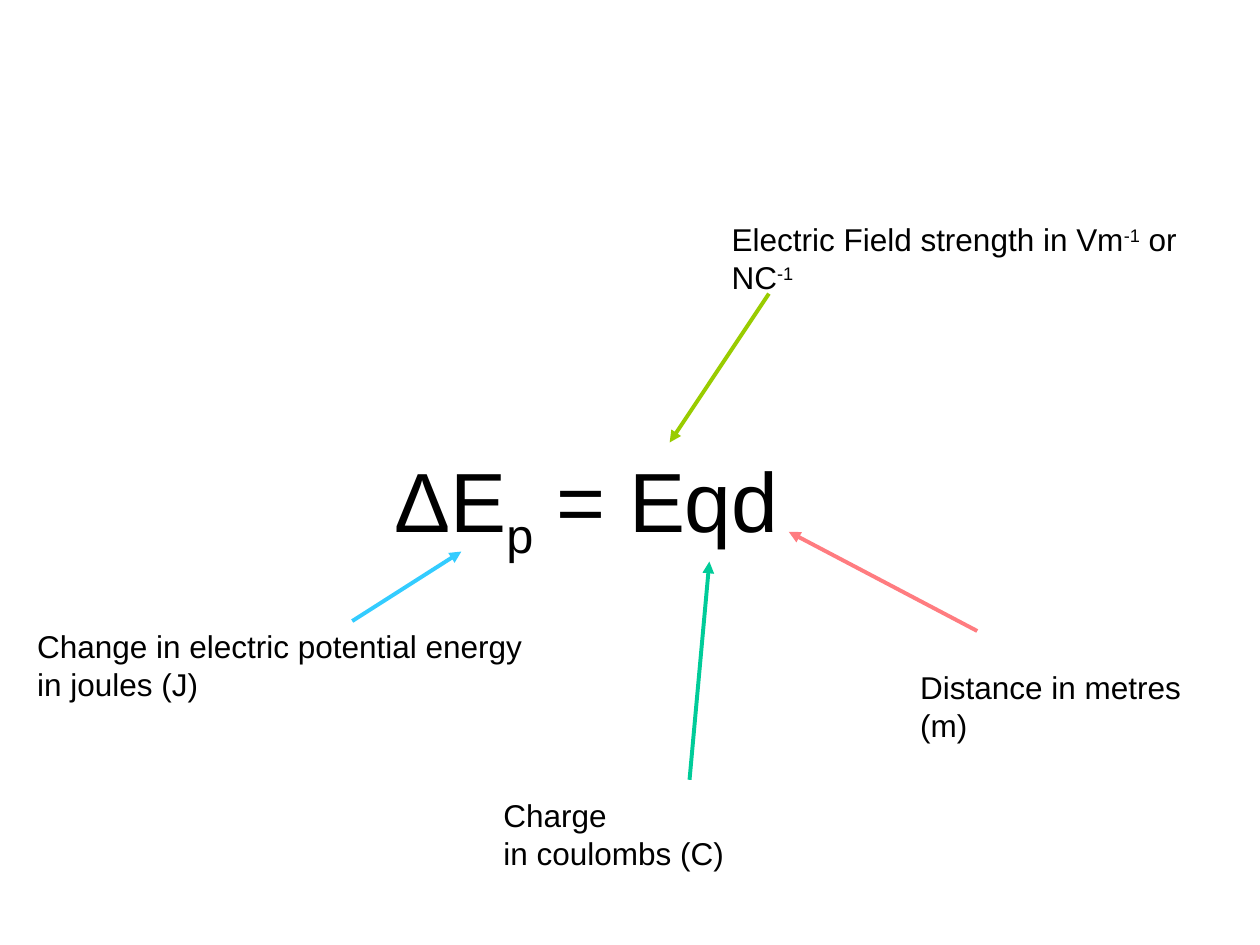
import pptx
import pptx.dml.color
import pptx.enum.dml
import pptx.enum.shapes
import pptx.enum.text
import pptx.oxml.ns
import pptx.util
from lxml import etree
from pptx.util import Cm

BLACK = pptx.dml.color.RGBColor(0x00, 0x00, 0x00)
SKY = pptx.dml.color.RGBColor(0x33, 0xCC, 0xFF)
LIME = pptx.dml.color.RGBColor(0x99, 0xCC, 0x00)
TEAL = pptx.dml.color.RGBColor(0x00, 0xCC, 0x99)
CORAL = pptx.dml.color.RGBColor(0xFF, 0x7C, 0x80)

FONT = "Arial"
SUPER, SUB = 30, -25  # baseline shift in percent
BLANK_LAYOUT = 6

# Content: paragraphs are lists of (text, baseline) runs; positions in cm
EQUATION = {
    "box": (7.7, 8.92, 8.43, 2.31), "size": 48, "wrap": False,
    "paragraphs": [[("ΔE", 0), ("p", SUB), (" = Eqd", 0)]],
}
LABELS = [
    {"box": (0.5, 12.52, 10.64, 1.8),
     "paragraphs": [[("Change in electric potential energy in joules (J)", 0)]]},
    {"box": (14.5, 4.32, 9.73, 1.8),
     "paragraphs": [[("Electric Field strength in Vm", 0), ("-1", SUPER),
                     (" or NC", 0), ("-1", SUPER)]]},
    {"box": (9.9, 15.92, 7.72, 1.8),
     "paragraphs": [[("Charge", 0)], [("in coulombs (C)", 0)]]},
    {"box": (18.3, 13.34, 6.35, 1.8),
     "paragraphs": [[("Distance in metres (m)", 0)]]},
]
# Arrows: start x, start y, end x, end y, colour
ARROWS = [
    (7.1, 12.52, 9.3, 11.12, SKY),
    (15.5, 5.92, 13.5, 8.92, LIME),
    (13.9, 15.72, 14.3, 11.32, TEAL),
    (19.7, 12.72, 15.9, 10.72, CORAL),
]


def add_text(slide, box, paragraphs, size=18, wrap=True):
    shape = slide.shapes.add_textbox(*(Cm(value) for value in box))
    frame = shape.text_frame
    frame.word_wrap = wrap
    frame.auto_size = pptx.enum.text.MSO_AUTO_SIZE.SHAPE_TO_FIT_TEXT
    for index, runs in enumerate(paragraphs):
        paragraph = frame.add_paragraph() if index else frame.paragraphs[0]
        for text, baseline in runs:
            run = paragraph.add_run()
            run.text = text
            run.font.name = FONT
            run.font.size = pptx.util.Pt(size)
            run.font.color.rgb = BLACK
            if baseline:
                run._r.get_or_add_rPr().set("baseline", str(baseline * 1000))


def add_arrow(slide, start_x, start_y, end_x, end_y, colour):
    connector = slide.shapes.add_connector(
        pptx.enum.shapes.MSO_CONNECTOR.STRAIGHT,
        Cm(start_x), Cm(start_y), Cm(end_x), Cm(end_y))
    connector.line.color.rgb = colour
    connector.line.width = pptx.util.Pt(2.25)
    # Arrowhead at the end, and no theme shadow
    outline = connector.line._get_or_add_ln()
    etree.SubElement(outline, pptx.oxml.ns.qn("a:tailEnd"), type="triangle")
    etree.SubElement(connector._element.spPr, pptx.oxml.ns.qn("a:effectLst"))


def main():
    presentation = pptx.Presentation()
    presentation.slide_width = Cm(25.4)
    presentation.slide_height = Cm(19.05)
    slide = presentation.slides.add_slide(presentation.slide_layouts[BLANK_LAYOUT])

    # Equation, then the arrows and labels that explain its symbols
    add_text(slide, **EQUATION)
    for arrow in ARROWS:
        add_arrow(slide, *arrow)
    for label in LABELS:
        add_text(slide, **label)

    presentation.save("out.pptx")


if __name__ == "__main__":
    main()
